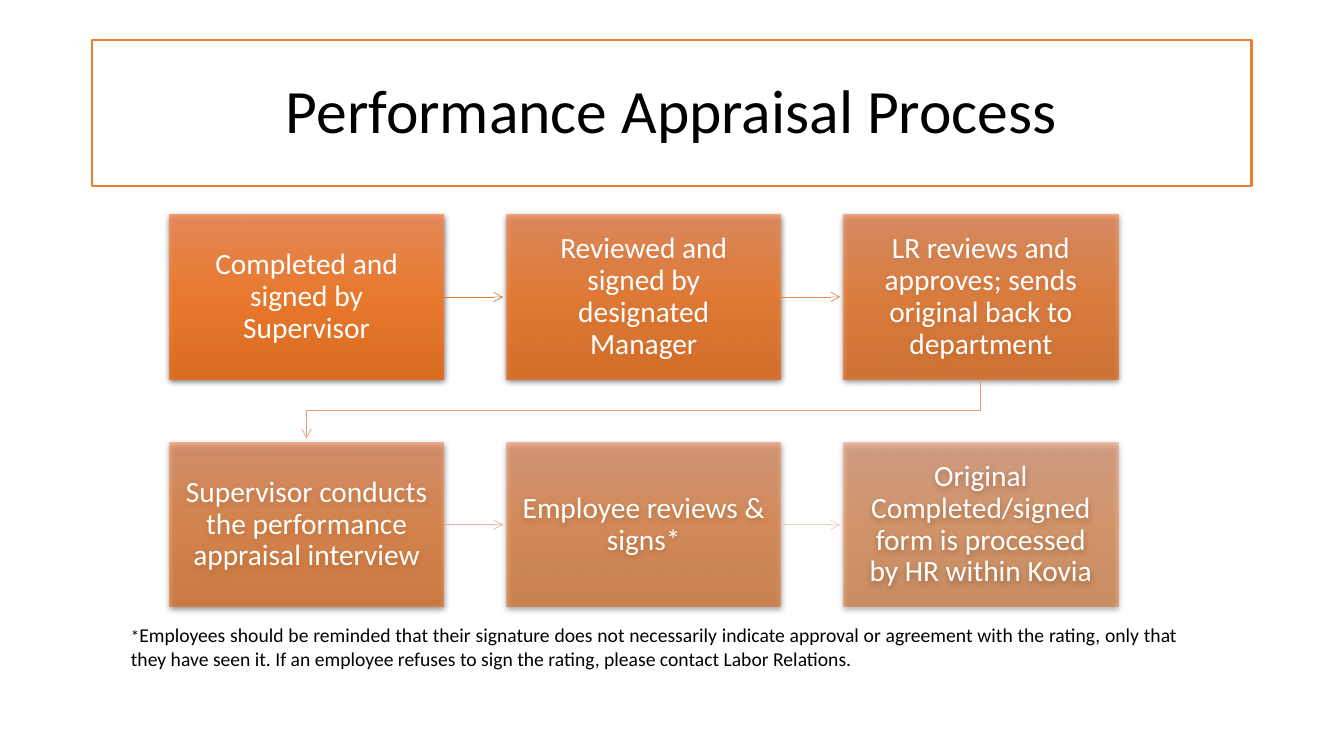
import pptx
import pptx.util
import pptx.dml.color
import pptx.enum.shapes
import pptx.enum.text
import pptx.oxml
import pptx.oxml.ns
import lxml.etree

Pt = pptx.util.Pt
qn = pptx.oxml.ns.qn
ALIGN = pptx.enum.text.PP_ALIGN
MIDDLE = pptx.enum.text.MSO_ANCHOR.MIDDLE


def rgb(hex_colour):
    return pptx.dml.color.RGBColor.from_string(hex_colour)


def style_arrow(arrow, colour):
    arrow.line.color.rgb = rgb(colour)
    arrow.line.width = Pt(0.5)
    properties = arrow.element.spPr
    lxml.etree.SubElement(properties.find(qn("a:ln")), qn("a:tailEnd"), type="arrow")
    if properties.find(qn("a:effectLst")) is None:
        lxml.etree.SubElement(properties, qn("a:effectLst"))


deck = pptx.Presentation()
deck.slide_width, deck.slide_height = Pt(960), Pt(540)
slide = deck.slides.add_slide(deck.slide_layouts[5])

# Title in an outlined frame
title = slide.shapes.title
title_place = {"left": Pt(66), "top": Pt(28.8), "width": Pt(828), "height": Pt(104.4)}
for name, value in title_place.items():
    setattr(title, name, value)
title.line.color.rgb = rgb("ED7D31")
title.line.width = Pt(1.5)
title.text_frame.text = "Performance Appraisal Process"
title.text_frame.vertical_anchor = MIDDLE
heading = title.text_frame.paragraphs[0]
heading.alignment = ALIGN.CENTER
heading.line_spacing = 0.9
for name, value in {"name": "Calibri", "size": Pt(44)}.items():
    setattr(heading.runs[0].font, name, value)
heading.runs[0].font.color.rgb = rgb("000000")

# Process steps: three per row, each paler than the one before
steps = [
    "Completed and signed by Supervisor",
    "Reviewed and signed by designated Manager",
    "LR reviews and approves; sends original back to department",
    "Supervisor conducts the performance appraisal interview",
    "Employee reviews & signs*",
    "Original Completed/signed form is processed by HR within Kovia",
]
arrow_colours = ["E2772F", "E78953", "EC9D77", "F1B39B", "F6CCBF"]
columns = 3
first_left, first_top = 121, 153.4
step_width, step_height = 196, 117.4
column_pitch, row_pitch = 240.8, 162.7
arrow_length = 42.4
step_format = {"word_wrap": True, "vertical_anchor": MIDDLE}
for side in ("left", "top", "right", "bottom"):
    step_format["margin_" + side] = Pt(11.5)

for index, wording in enumerate(steps):
    row, column = divmod(index, columns)
    left = first_left + column * column_pitch
    top = first_top + row * row_pitch
    step = slide.shapes.add_shape(
        pptx.enum.shapes.MSO_SHAPE.RECTANGLE,
        Pt(left), Pt(top), Pt(step_width), Pt(step_height))
    step.fill.background()
    step.line.fill.background()
    step.shadow.inherit = False

    # Translucent gradient and soft shadow
    opacity = (90 - 8 * index) * 1000
    stops = "".join(
        f'<a:gs pos="{position}"><a:srgbClr val="{colour}"><a:alpha val="{opacity}"/></a:srgbClr></a:gs>'
        for position, colour in [(0, "F18C57"), (50000, "F67B28"), (100000, "E56C19")])
    namespace = pptx.oxml.ns.nsdecls("a")
    properties = step.element.spPr
    properties.replace(properties.find(qn("a:noFill")), pptx.oxml.parse_xml(
        f'<a:gradFill {namespace} rotWithShape="1"><a:gsLst>{stops}</a:gsLst>'
        '<a:lin ang="5400000" scaled="0"/></a:gradFill>'))
    properties.find(qn("a:effectLst")).append(pptx.oxml.parse_xml(
        f'<a:outerShdw {namespace} blurRad="{Pt(4.5)}" dist="{Pt(1.5)}" dir="5400000" algn="ctr" '
        'rotWithShape="0"><a:srgbClr val="000000"><a:alpha val="63000"/></a:srgbClr></a:outerShdw>'))

    # Step wording
    for name, value in step_format.items():
        setattr(step.text_frame, name, value)
    label = step.text_frame.paragraphs[0]
    label.text = wording
    label.alignment = ALIGN.CENTER
    label.line_spacing = 0.9
    for name, value in {"name": "Calibri", "size": Pt(21)}.items():
        setattr(label.font, name, value)
    label.font.color.rgb = rgb("FFFFFF")

    # Arrow to the next step, bent where the row ends
    if index == len(steps) - 1:
        continue
    if column < columns - 1:
        start, middle = left + step_width, top + step_height / 2
        arrow = slide.shapes.add_connector(
            pptx.enum.shapes.MSO_CONNECTOR.STRAIGHT,
            Pt(start), Pt(middle), Pt(start + arrow_length), Pt(middle))
    else:
        start, bottom = left + step_width / 2, top + step_height
        end = first_left + step_width / 2
        bend = (bottom + top + row_pitch) / 2
        outline = slide.shapes.build_freeform(Pt(start), Pt(bottom))
        outline.add_line_segments(
            [(Pt(start), Pt(bend)), (Pt(end), Pt(bend)), (Pt(end), Pt(bottom + arrow_length))],
            close=False)
        arrow = outline.convert_to_shape()
        arrow.fill.background()
        arrow.shadow.inherit = False
    style_arrow(arrow, arrow_colours[index])

# Footnote
footnote = slide.shapes.add_textbox(Pt(86.4), Pt(441.4), Pt(762.5), Pt(41))
footnote.text_frame.word_wrap = True
note = footnote.text_frame.paragraphs[0]
note.alignment = ALIGN.JUSTIFY
for wording, size in [
    ("*", 12),
    ("Employees should be reminded that their signature does not necessarily indicate "
     "approval or agreement with the rating, only that they have seen it. If an employee "
     "refuses to sign the rating, please contact Labor Relations.", 14),
]:
    part = note.add_run()
    part.text = wording
    for name, value in {"name": "Calibri", "size": Pt(size)}.items():
        setattr(part.font, name, value)
    part.font.color.rgb = rgb("000000")

deck.save("out.pptx")
